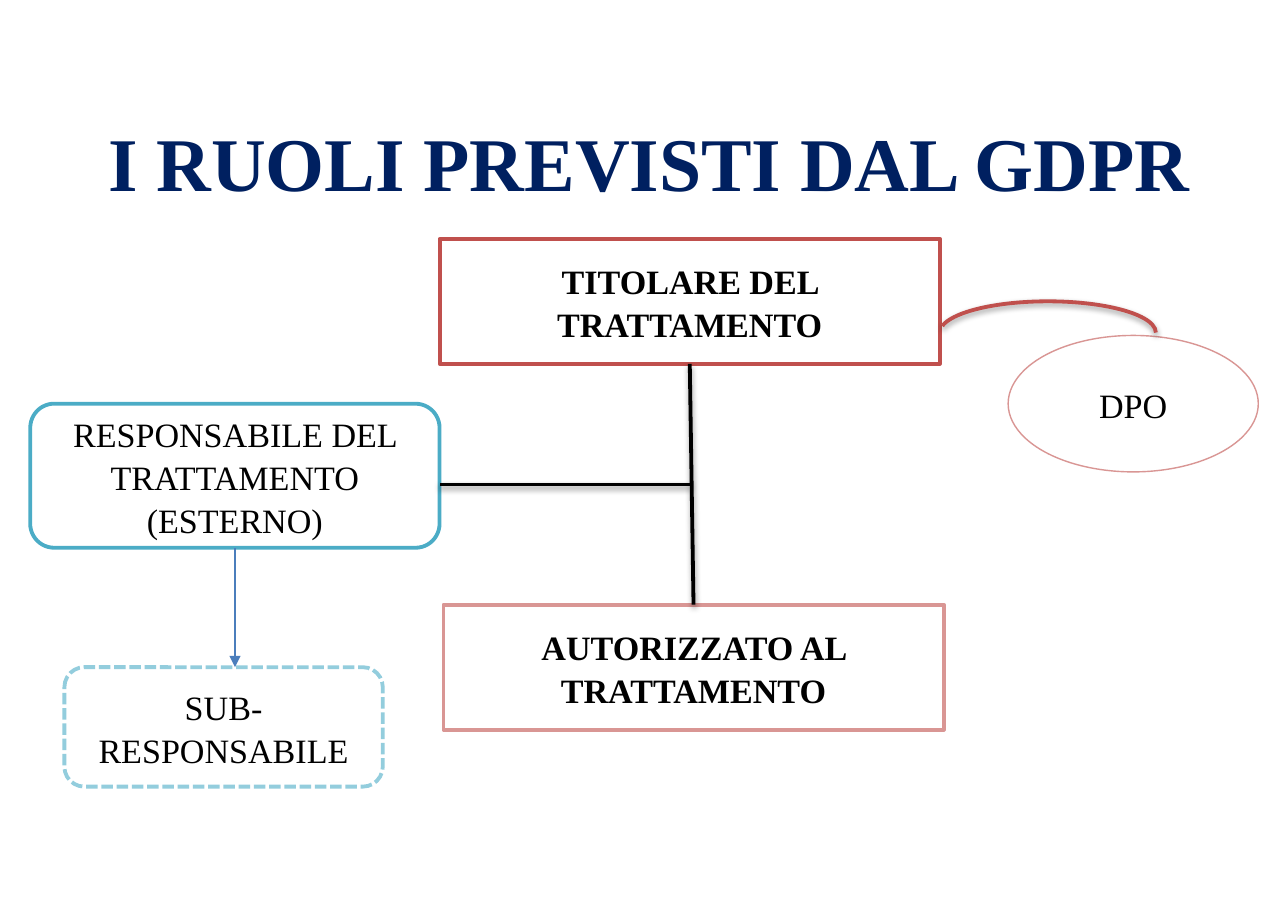
from lxml import etree
from pptx import Presentation
from pptx import util as u
from pptx.dml.color import RGBColor
from pptx.enum import dml, shapes, text
from pptx.oxml.ns import qn

Pt = u.Pt
COLORS = {"navy": "002060", "red": "C0504D", "pink": "D99694", "teal": "4BACC6",
          "aqua": "93CDDD", "blue": "4B7EBC", "black": "000000", "white": "FFFFFF"}
SHAPE = shapes.MSO_SHAPE


def rgb(name):
    return RGBColor.from_string(COLORS[name])


class RolesSlide:
    font = "Times New Roman"

    def __init__(self, prs):
        self.s = prs.slides.add_slide(prs.slide_layouts[5])

    def add_text(self, tf, words, size, color, bold):
        tf.word_wrap = True
        p = tf.paragraphs[0]
        p.alignment = text.PP_ALIGN.CENTER
        r = p.add_run()
        r.text = words
        r.font.name, r.font.size, r.font.bold = self.font, Pt(size), bold
        r.font.color.rgb = rgb(color)
        return p

    def title(self, words, x, y, w, h):
        sp = self.s.shapes.title
        sp.left, sp.top, sp.width, sp.height = Pt(x), Pt(y), Pt(w), Pt(h)
        tf = sp.text_frame
        tf.margin_left = tf.margin_right = tf.margin_bottom = 0
        tf.margin_top = Pt(5)
        tf.vertical_anchor = text.MSO_ANCHOR.TOP
        tf.auto_size = text.MSO_AUTO_SIZE.NONE
        self.add_text(tf, words, 40, "navy", True)

    def outline(self, sp, color, width):
        sp.line.color.rgb = rgb(color)
        sp.line.width = Pt(width)

    def box(self, kind, words, x, y, w, h, color, width=2, bold=False, dash=None):
        sp = self.s.shapes.add_shape(kind, Pt(x), Pt(y), Pt(w), Pt(h))
        sp.shadow.inherit = False
        sp.fill.solid()
        sp.fill.fore_color.rgb = rgb("white")
        self.outline(sp, color, width)
        if dash:
            sp.line.dash_style = dash
        sp.text_frame.vertical_anchor = text.MSO_ANCHOR.MIDDLE
        self.add_text(sp.text_frame, words, 18, "black", bold).line_spacing = 1.05
        return sp

    def drop_shadow(self, effects):
        shadow = etree.SubElement(effects, qn("a:outerShdw"), blurRad=str(Pt(3.1)),
                                  dist=str(Pt(1.6)), dir="5400000", rotWithShape="0")
        tint = etree.SubElement(shadow, qn("a:srgbClr"), val=COLORS["black"])
        etree.SubElement(tint, qn("a:alpha"), val="38000")

    def arc(self, x, y, w, h, start, color):
        sp = self.s.shapes.add_shape(SHAPE.ARC, Pt(x), Pt(y), Pt(w), Pt(h))
        sp.adjustments[0], sp.adjustments[1] = start, 0
        sp.fill.background()
        self.outline(sp, color, 2)
        sp.shadow.inherit = False
        self.drop_shadow(sp.element.spPr.find(qn("a:effectLst")))

    def line(self, x1, y1, x2, y2, color, width=2, start=None, end=None, arrow=False):
        c = self.s.shapes.add_connector(shapes.MSO_CONNECTOR.STRAIGHT,
                                        Pt(x1), Pt(y1), Pt(x2), Pt(y2))
        if start:
            c.begin_connect(*start)
        if end:
            c.end_connect(*end)
        self.outline(c, color, width)
        effects = etree.SubElement(c.element.spPr, qn("a:effectLst"))
        if arrow:
            ln = c.element.spPr.find(qn("a:ln"))
            etree.SubElement(ln, qn("a:tailEnd"), type="triangle")
        else:
            self.drop_shadow(effects)


def main():
    prs = Presentation()
    prs.slide_width, prs.slide_height = u.Inches(9.44), u.Inches(6.69)
    slide = RolesSlide(prs)
    slide.title("I RUOLI PREVISTI DAL GDPR", 34, 56, 617, 48)

    # Roles
    controller = slide.box(SHAPE.RECTANGLE, "TITOLARE DEL TRATTAMENTO",
                           232, 126, 264, 66, "red", bold=True)
    slide.box(SHAPE.OVAL, "DPO", 532, 177, 132, 72, "pink", width=0.75)
    authorised = slide.box(SHAPE.RECTANGLE, "AUTORIZZATO AL TRATTAMENTO",
                           234, 319, 264, 66, "pink", bold=True)
    processor = slide.box(SHAPE.ROUNDED_RECTANGLE, "RESPONSABILE DEL TRATTAMENTO (ESTERNO)",
                          16, 213, 216, 76, "teal")
    slide.box(SHAPE.ROUNDED_RECTANGLE, "SUB-RESPONSABILE", 34, 352, 168, 63, "aqua",
              dash=dml.MSO_LINE.SQUARE_DOT)

    # Links between the roles
    slide.line(364, 192, 366, 319, "black", start=(controller, 2), end=(authorised, 0))
    slide.arc(496, 159, 114, 33, 110.16, "red")
    slide.line(124, 289, 124, 352, "blue", width=0.75, start=(processor, 2), arrow=True)
    slide.line(365, 255.6, 232, 255.6, "black")

    prs.save("out.pptx")


if __name__ == "__main__":
    main()
